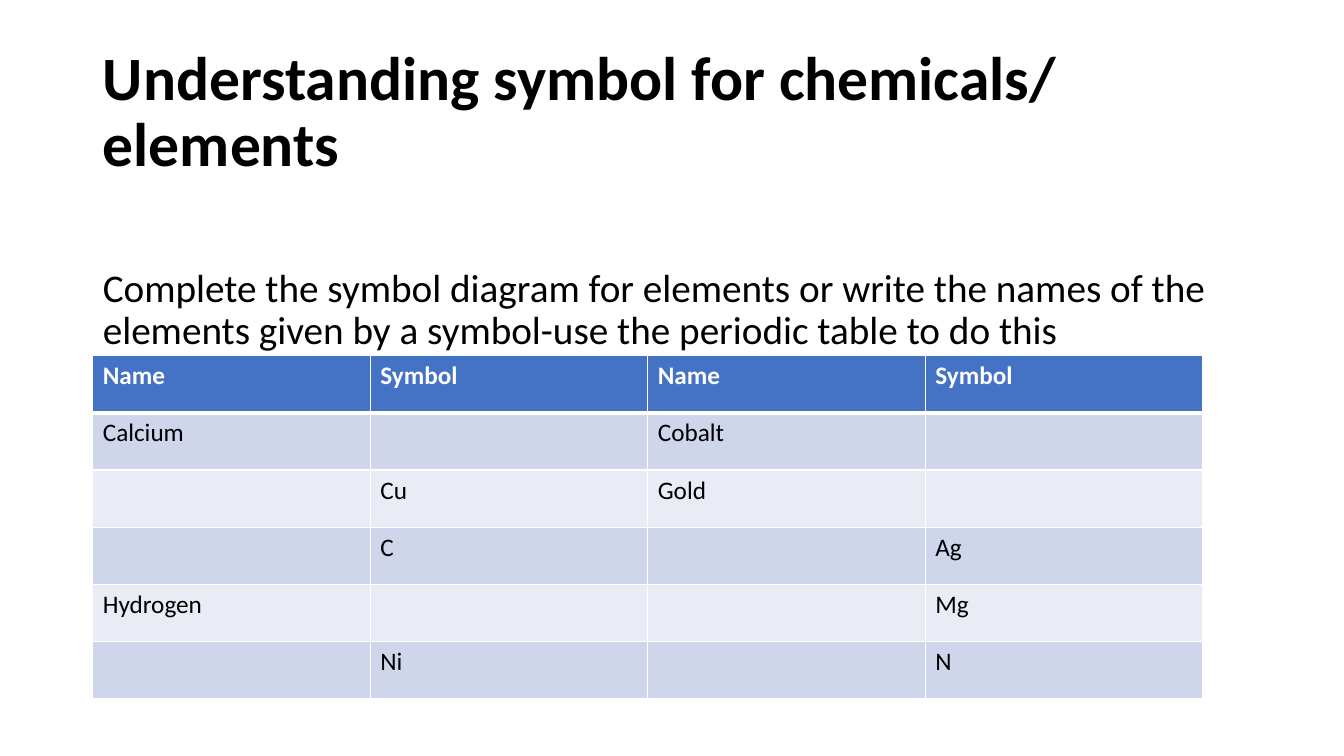
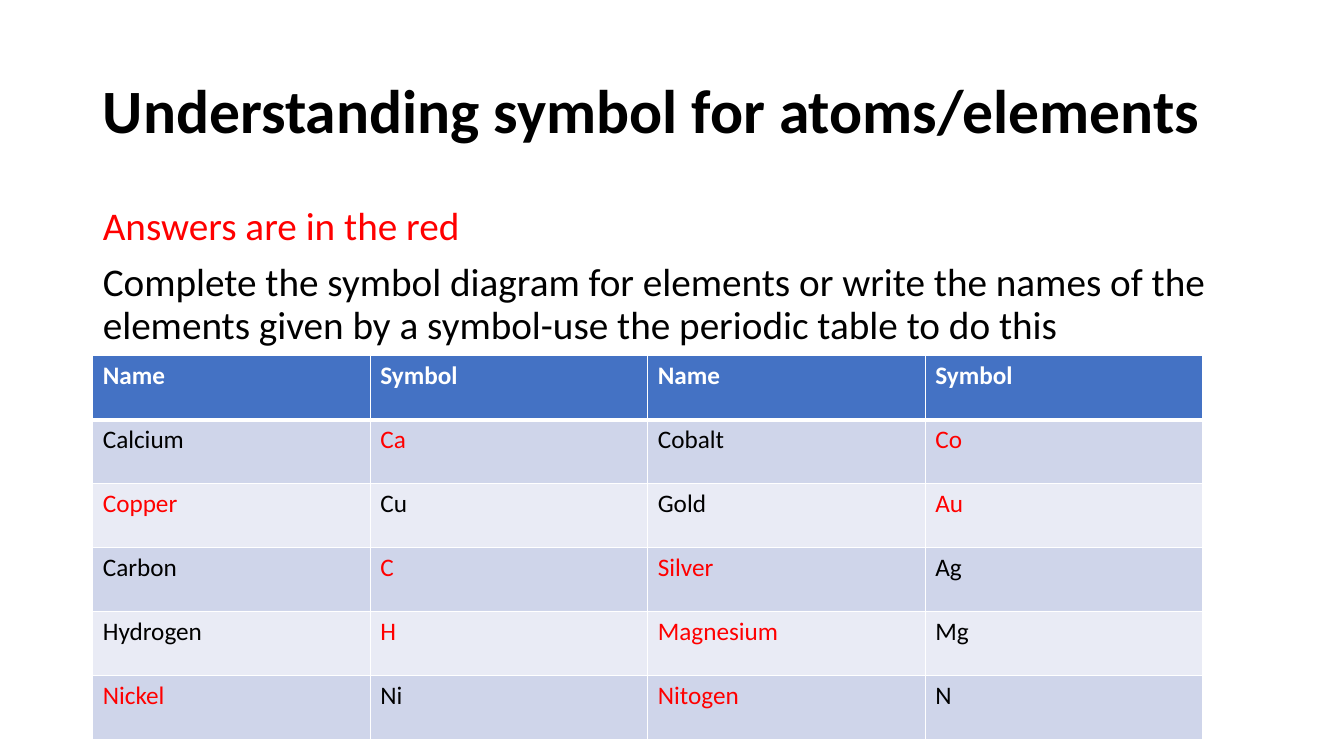
import dataclasses

import lxml.etree
import pptx
import pptx.dml.color
import pptx.enum.text
import pptx.oxml.ns
import pptx.util


@dataclasses.dataclass(frozen=True)
class Theme:
    font: str = "Calibri"
    ink: str = "000000"
    white: str = "FFFFFF"
    answer: str = "FF0000"
    header: str = "4472C4"
    bands: tuple = ("CFD5EA", "E9EBF5")
    title_size: int = 44
    body_size: int = 28
    table_size: int = 18


THEME = Theme()
EMU_PER_PX = 9144
LEFT = 92
TABLE_TOP = 353
HEADER = ("Name", "Symbol", "Name", "Symbol")
TASK = (
    "Complete the symbol diagram for elements or write the names of the "
    "elements given by a symbol-use the periodic table to do this"
)
QUESTION_ROWS = (
    ("Calcium", "", "Cobalt", ""),
    ("", "Cu", "Gold", ""),
    ("", "C", "", "Ag"),
    ("Hydrogen", "", "", "Mg"),
    ("", "Ni", "", "N"),
)
ANSWER_ROWS = (
    ("Calcium", "Ca", "Cobalt", "Co"),
    ("Copper", "Cu", "Gold", "Au"),
    ("Carbon", "C", "Silver", "Ag"),
    ("Hydrogen", "H", "Magnesium", "Mg"),
    ("Nickel", "Ni", "Nitogen", "N"),
)
ANSWERS = {"Ca", "Co", "Copper", "Au", "C", "Silver", "H", "Magnesium", "Nickel", "Nitogen"}


def px(n):
    return pptx.util.Emu(n * EMU_PER_PX)


def rgb(color):
    return pptx.dml.color.RGBColor.from_string(color)


def write(p, text, size, color=THEME.ink, bold=False, line=None, before=0):
    p.alignment = pptx.enum.text.PP_ALIGN.LEFT
    p.space_before = pptx.util.Pt(before)
    if line:
        p.line_spacing = line
    r = p.add_run()
    r.text = text
    r.font.name = THEME.font
    r.font.size = pptx.util.Pt(size)
    r.font.bold = bold
    r.font.color.rgb = rgb(color)


def place(sp, top, height, anchor):
    sp.left, sp.top, sp.width, sp.height = px(LEFT), px(top), px(1150), px(height)
    tf = sp.text_frame
    tf.word_wrap = True
    tf.auto_size = pptx.enum.text.MSO_AUTO_SIZE.NONE
    tf.vertical_anchor = anchor
    return tf


def add_title(s, text):
    tf = place(s.shapes.title, 40, 145, pptx.enum.text.MSO_ANCHOR.MIDDLE)
    write(tf.paragraphs[0], text, THEME.title_size, bold=True, line=0.9)


def add_body(s, top, lines):
    tf = place(s.placeholders[1], top, 676 - top, pptx.enum.text.MSO_ANCHOR.TOP)
    for i, (text, color) in enumerate(lines):
        p = tf.add_paragraph() if i else tf.paragraphs[0]
        pPr = p._p.get_or_add_pPr()
        pPr.set("marL", "0")
        pPr.set("indent", "0")
        lxml.etree.SubElement(pPr, pptx.oxml.ns.qn("a:buNone"))
        write(p, text, THEME.body_size, color, line=0.9, before=10 if i else 0)


def set_border(cell, side, width):
    tcPr = cell._tc.get_or_add_tcPr()
    ln = lxml.etree.SubElement(tcPr, pptx.oxml.ns.qn(f"a:ln{side}"), w=str(pptx.util.Pt(width)))
    fill = lxml.etree.SubElement(ln, pptx.oxml.ns.qn("a:solidFill"))
    lxml.etree.SubElement(fill, pptx.oxml.ns.qn("a:srgbClr"), val=THEME.white)


def format_cell(cell, row, fill):
    thick = {0: "B", 1: "T"}.get(row)
    for side in "LRTB":
        set_border(cell, side, 3 if side == thick else 1)
    cell.fill.solid()
    cell.fill.fore_color.rgb = rgb(fill)


def add_element_table(s, rows, height, answers=frozenset()):
    grid = (HEADER, *rows)
    table = s.shapes.add_table(
        len(grid), len(HEADER), px(LEFT), px(TABLE_TOP), px(1101), px(height)
    ).table
    for i, row in enumerate(grid):
        fill = THEME.bands[(i - 1) % 2] if i else THEME.header
        for j, text in enumerate(row):
            cell = table.cell(i, j)
            format_cell(cell, i, fill)
            if text:
                color = THEME.answer if text in answers else THEME.ink
                write(
                    cell.text_frame.paragraphs[0],
                    text,
                    THEME.table_size,
                    color if i else THEME.white,
                    bold=i == 0,
                )


def add_slide(prs, title, body_top, lines):
    s = prs.slides.add_slide(prs.slide_layouts[1])
    add_title(s, title)
    add_body(s, body_top, lines)
    return s


def main():
    prs = pptx.Presentation()
    prs.slide_width, prs.slide_height = px(1333), px(750)
    task = (TASK, THEME.ink)

    s = add_slide(prs, "Understanding symbol for chemicals/ elements", 261, [task])
    add_element_table(s, QUESTION_ROWS, 340)

    s = add_slide(
        prs,
        "Understanding symbol for atoms/elements",
        200,
        [("Answers are in the red", THEME.answer), task],
    )
    add_element_table(s, ANSWER_ROWS, 381, ANSWERS)

    prs.save("out.pptx")


if __name__ == "__main__":
    main()
